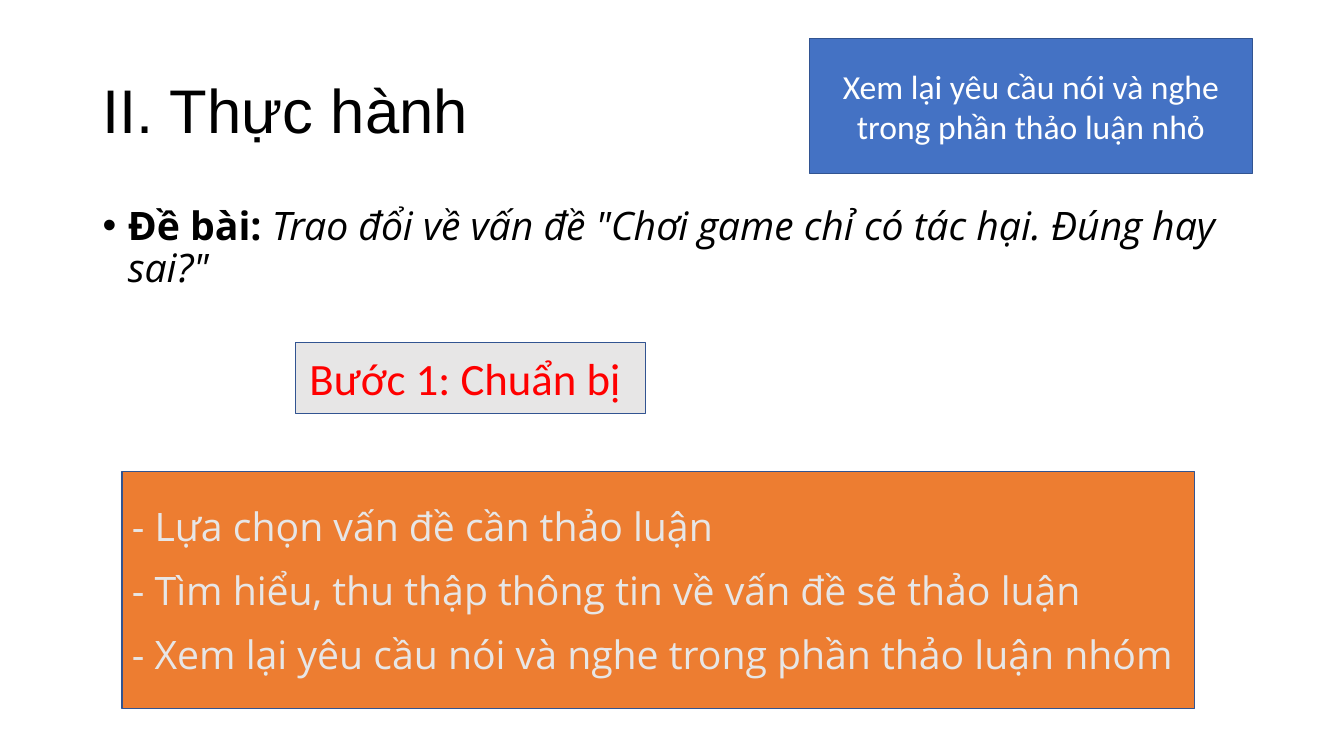
import pptx
import pptx.dml.color
import pptx.enum.shapes
import pptx.enum.text
import pptx.util
from lxml import etree

Inches, Pt = pptx.util.Inches, pptx.util.Pt
RGB = pptx.dml.color.RGBColor.from_string
ALIGN = pptx.enum.text.PP_ALIGN
ANCHOR = pptx.enum.text.MSO_ANCHOR
COLORS = {"black": "000000", "white": "FFFFFF", "blue": "4472C4", "border": "325491",
          "gray": "E7E6E6", "orange": "ED7D31", "red": "FF0000"}


def style(p, size, font, color):
    p.font.size = Pt(size)
    p.font.name = font
    p.font.color.rgb = RGB(COLORS[color])


prs = pptx.Presentation()
prs.slide_width, prs.slide_height = Inches(13.33), Inches(7.5)
s = prs.slides.add_slide(prs.slide_layouts[6])

title = s.shapes.add_textbox(Inches(0.92), Inches(0.4), Inches(11.5), Inches(1.45))
tf = title.text_frame
tf.word_wrap = True
tf.vertical_anchor = ANCHOR.MIDDLE
p = tf.paragraphs[0]
p.text = "II. Thực hành"
p.line_spacing = 0.9
style(p, 44, "Arial", "black")

topic = s.shapes.add_textbox(Inches(0.92), Inches(2), Inches(11.5), Inches(1.19))
tf = topic.text_frame
tf.word_wrap = True
p = tf.paragraphs[0]
p.line_spacing = 0.9
p.space_before = Pt(10)
style(p, 28, "Open Sans", "black")
r = p.add_run()
r.text = "Đề bài: "
r.font.bold = True
r = p.add_run()
r.text = 'Trao đổi về vấn đề "Chơi game chỉ có tác hại. Đúng hay sai?"'
r.font.italic = True
pPr = p._p.get_or_add_pPr()
pPr.set("marL", str(Inches(0.25)))
pPr.set("indent", str(-Inches(0.25)))
ns = "{http://schemas.openxmlformats.org/drawingml/2006/main}"
bullet_font = etree.Element(ns + "buFont", typeface="Arial")
bullet = etree.Element(ns + "buChar", char="•")
pPr.find(ns + "spcBef").addnext(bullet_font)
bullet_font.addnext(bullet)

boxes = [
    ((8.03, 0.38, 4.39, 1.34), "blue", 24, "Calibri", "white", ALIGN.CENTER, 0,
     ["Xem lại yêu cầu nói và nghe trong phần thảo luận nhỏ"]),
    ((2.93, 3.4, 3.47, 0.7), "gray", 32, "Calibri", "red", ALIGN.CENTER, 0,
     ["Bước 1: Chuẩn bị "]),
    ((1.21, 4.68, 10.64, 2.35), "orange", 28, "Open Sans", "gray", ALIGN.LEFT, 6,
     ["- Lựa chọn vấn đề cần thảo luận",
      "- Tìm hiểu, thu thập thông tin về vấn đề sẽ thảo luận",
      "- Xem lại yêu cầu nói và nghe trong phần thảo luận nhóm"]),
]
for place, fill, size, font, color, align, gap, lines in boxes:
    sp = s.shapes.add_shape(pptx.enum.shapes.MSO_SHAPE.RECTANGLE, *map(Inches, place))
    sp.shadow.inherit = False
    sp.fill.solid()
    sp.fill.fore_color.rgb = RGB(COLORS[fill])
    sp.line.color.rgb = RGB(COLORS["border"])
    sp.line.width = Pt(1)
    tf = sp.text_frame
    tf.word_wrap = True
    tf.vertical_anchor = ANCHOR.MIDDLE
    for i, line in enumerate(lines):
        p = tf.add_paragraph() if i else tf.paragraphs[0]
        p.text = line
        p.alignment = align
        p.space_before = p.space_after = Pt(gap)
        style(p, size, font, color)

prs.save("out.pptx")
